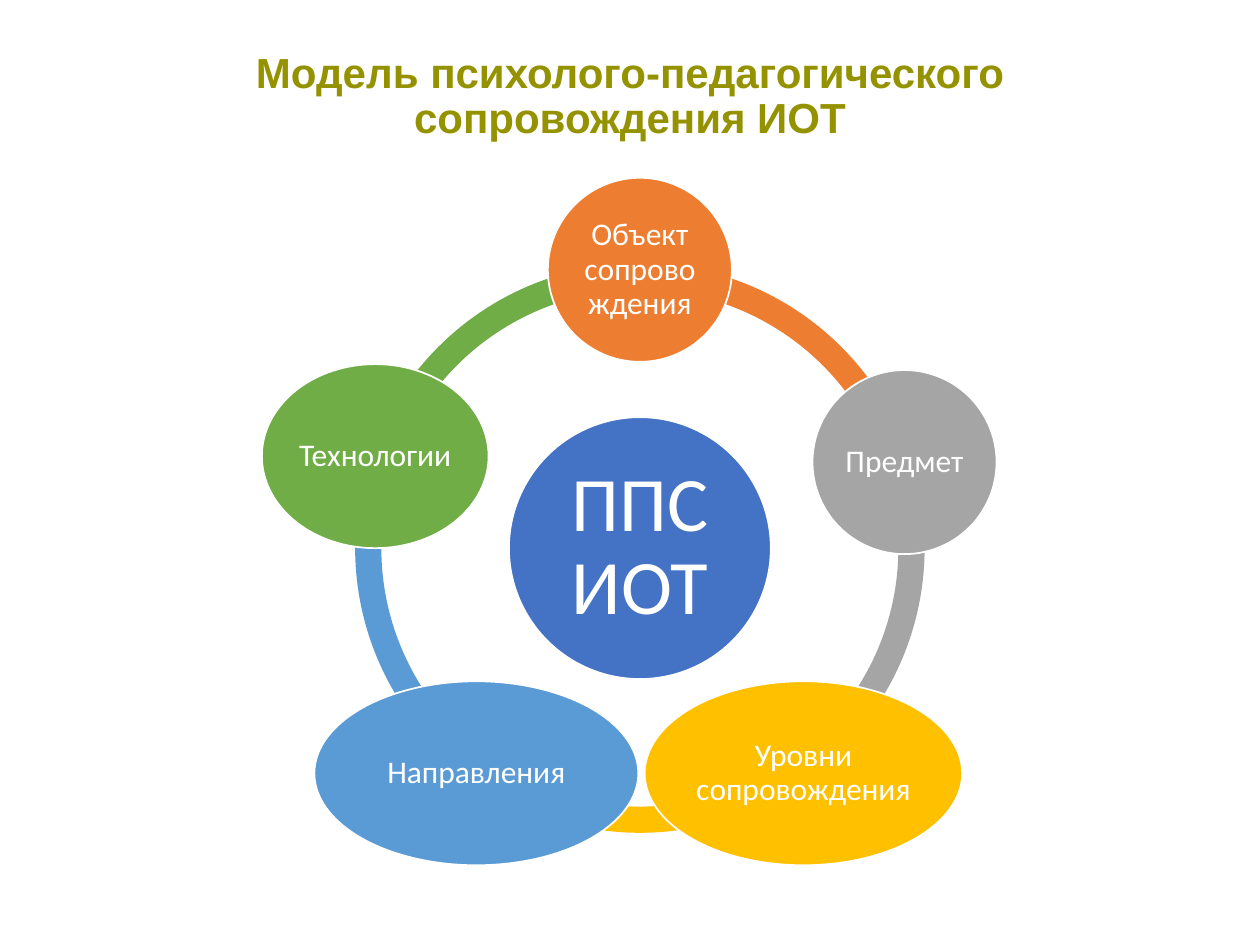
from dataclasses import dataclass
from math import cos, radians, sin

from pptx import Presentation
from pptx.dml.color import RGBColor
from pptx.enum.shapes import MSO_SHAPE
from pptx.enum.text import MSO_ANCHOR, PP_ALIGN
from pptx.util import Cm, Pt


@dataclass(frozen=True)
class Theme:
    title_color: str = "959200"
    center_color: str = "4472C4"
    light: str = "FFFFFF"
    title_font: str = "Arial"
    body_font: str = "Calibri"
    title_size: int = 24
    center_size: int = 44
    node_size: int = 18
    outline: int = 1
    line_spacing: float = 0.9


CENTER_X, CENTER_Y = 12.9, 11.05
RING_DIAMETER = 11.48
RING_THICKNESS = 0.046
ORBIT_RADIUS = 5.61
CENTER_DIAMETER = 5.28
NODE_HEIGHT = 3.71

# Text, color, width and vertical shift in cm, clockwise from the top
NODES = [
    ("Объект сопровождения", "ED7D31", 3.71, 0),
    ("Предмет", "A5A5A5", 3.71, 0),
    ("Уровни сопровождения", "FFC000", 6.4, 0),
    ("Направления", "5B9BD5", 6.53, 0),
    ("Технологии", "70AD47", 4.57, -0.12),
]


class SlideBuilder:
    def __init__(self, slide, theme):
        self.slide = slide
        self.theme = theme

    def set_text(self, shape, text, size, font, color, inset, bold=False):
        """Put one centred, wrapped paragraph into a shape."""
        frame = shape.text_frame
        frame.text = text
        frame.word_wrap = True
        frame.vertical_anchor = MSO_ANCHOR.MIDDLE
        frame.margin_left = frame.margin_right = Cm(inset)
        frame.margin_top = frame.margin_bottom = Cm(inset)
        paragraph = frame.paragraphs[0]
        paragraph.alignment = PP_ALIGN.CENTER
        paragraph.line_spacing = self.theme.line_spacing
        run_font = paragraph.runs[0].font
        run_font.name = font
        run_font.size = Pt(size)
        run_font.bold = bold
        run_font.color.rgb = RGBColor.from_string(color)

    def title(self, text, left, top, width, height):
        box = self.slide.shapes.add_textbox(Cm(left), Cm(top), Cm(width), Cm(height))
        self.set_text(box, text, self.theme.title_size, self.theme.title_font,
                      self.theme.title_color, 0.13, bold=True)

    def centered_shape(self, kind, x, y, width, height, color):
        """Add a filled preset shape whose middle is at x, y."""
        shape = self.slide.shapes.add_shape(
            kind, Cm(x - width / 2), Cm(y - height / 2), Cm(width), Cm(height))
        shape.shadow.inherit = False
        shape.fill.solid()
        shape.fill.fore_color.rgb = RGBColor.from_string(color)
        return shape

    def arc(self, start, end, color):
        """Add a ring segment; angles are degrees clockwise from the right."""
        arc = self.centered_shape(MSO_SHAPE.BLOCK_ARC, CENTER_X, CENTER_Y,
                                  RING_DIAMETER, RING_DIAMETER, color)
        arc.line.fill.background()
        # Angles are stored as 60000 units per degree, adjustments as 100000 per 1
        arc.adjustments[0] = start % 360 * 0.6
        arc.adjustments[1] = end % 360 * 0.6
        arc.adjustments[2] = RING_THICKNESS

    def ellipse(self, text, x, y, width, height, color, size, inset):
        ellipse = self.centered_shape(MSO_SHAPE.OVAL, x, y, width, height, color)
        ellipse.line.color.rgb = RGBColor.from_string(self.theme.light)
        ellipse.line.width = Pt(self.theme.outline)
        self.set_text(ellipse, text, size, self.theme.body_font, self.theme.light, inset)


def main():
    presentation = Presentation()
    presentation.slide_width, presentation.slide_height = Cm(25.4), Cm(19.05)
    slide = presentation.slides.add_slide(presentation.slide_layouts[6])
    theme = Theme()
    builder = SlideBuilder(slide, theme)

    builder.title("Модель психолого-педагогического сопровождения ИОТ",
                  1.75, 1.02, 21.9, 1.9)

    step = 360 / len(NODES)
    angles = [270 + step * index for index in range(len(NODES))]
    for angle, (_, color, _, _) in reversed(list(zip(angles, NODES))):
        builder.arc(angle, angle + step, color)

    builder.ellipse("ППС ИОТ", CENTER_X, CENTER_Y, CENTER_DIAMETER, CENTER_DIAMETER,
                    theme.center_color, theme.center_size, 0.15)
    for angle, (text, color, width, shift) in zip(angles, NODES):
        x = CENTER_X + ORBIT_RADIUS * cos(radians(angle))
        y = CENTER_Y + ORBIT_RADIUS * sin(radians(angle)) + shift
        builder.ellipse(text, x, y, width, NODE_HEIGHT, color, theme.node_size, 0.08)

    presentation.save("out.pptx")


if __name__ == "__main__":
    main()
